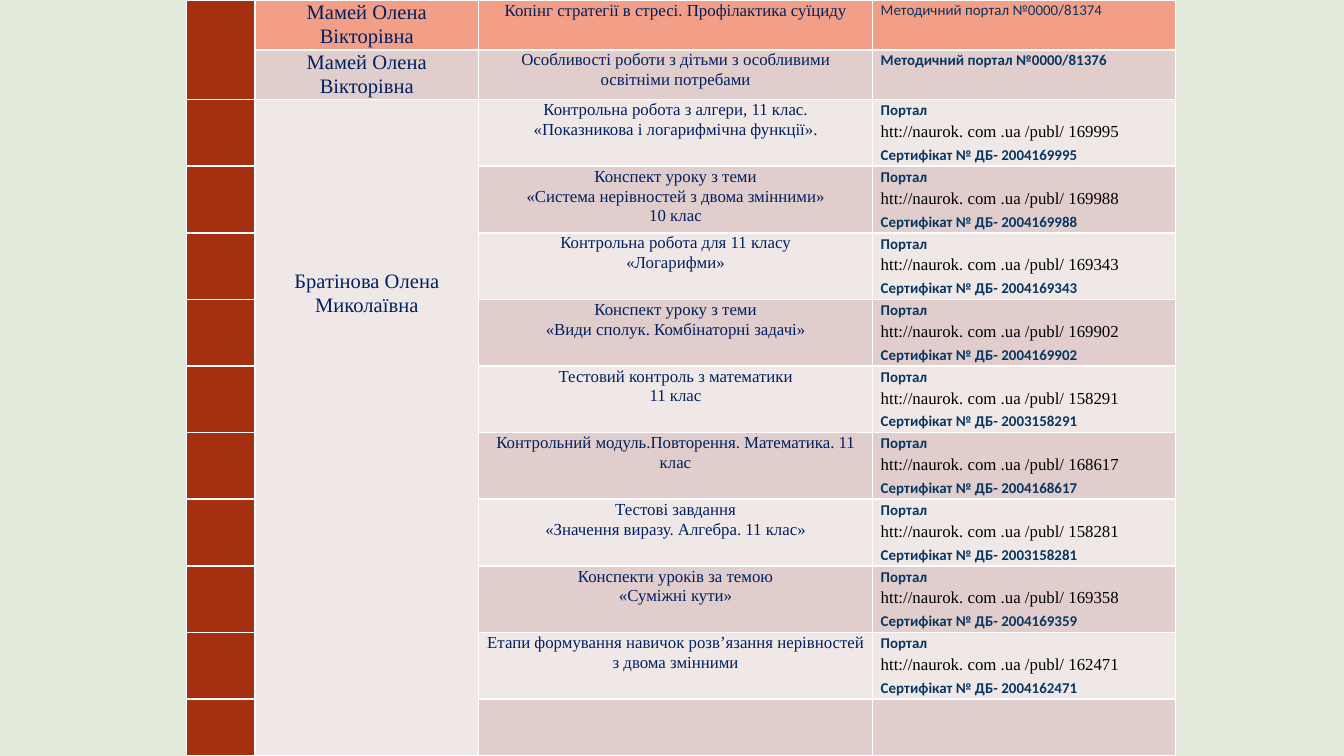
"""Builds a slide with a table of teachers' published works."""
import pptx
import pptx.dml.color
import pptx.enum.text
import pptx.oxml
import pptx.oxml.ns
import pptx.util

Pt = pptx.util.Pt
Rgb = pptx.dml.color.RGBColor.from_string
mid = pptx.enum.text.PP_ALIGN.CENTER
left = pptx.enum.text.PP_ALIGN.LEFT
hues = {"page": "E3E9DB", "rust": "A53010", "coral": "F39E87", "rose": "E1CDCC",
        "pale": "F0E8E7", "line": "FFFFFF", "navy": "002060", "blue": "073662", "black": "000000"}
fonts = {"serif": "Times New Roman", "sans": "Calibri"}
name = ("serif", 11, "navy", False, 1.06, 0)
work = ("serif", 9, "navy", False, 1.06, 0)
link = ("serif", 9, "black", False, 1.15, 0)
note = ("sans", 8, "blue", False, 1.06, 2)
bold = ("sans", 8, "blue", True, 1.06, 2)


def write(cell, lines, looks, align):
    """Puts one paragraph per line in the cell, each with its own look."""
    frame = cell.text_frame
    frame.text = "\n".join(lines)
    for i, (para, look) in enumerate(zip(frame.paragraphs, looks)):
        font, size, hue, heavy, gap, space = look
        para.alignment = align
        para.line_spacing = gap
        if i:
            para.space_before = Pt(space)
        for run in para.runs:
            run.font.name = fonts[font]
            run.font.size = Pt(size)
            run.font.bold = heavy
            run.font.color.rgb = Rgb(hues[hue])


def paint(cell, hue):
    """Gives the cell its borders, fill and margins."""
    props = cell._tc.get_or_add_tcPr()
    for side in ("lnL", "lnR", "lnT", "lnB"):
        props.append(pptx.oxml.parse_xml(
            f'<a:{side} {pptx.oxml.ns.nsdecls("a")} w="{Pt(1)}"><a:solidFill>'
            f'<a:srgbClr val="{hues["line"]}"/></a:solidFill></a:{side}>'))
    cell.fill.solid()
    cell.fill.fore_color.rgb = Rgb(hues[hue])
    cell.margin_left = cell.margin_right = Pt(4.5)
    cell.margin_top = cell.margin_bottom = 0


deck = pptx.Presentation()
deck.slide_width, deck.slide_height = Pt(720), Pt(405)
slide = deck.slides.add_slide(deck.slide_layouts[6])
slide.background.fill.solid()
slide.background.fill.fore_color.rgb = Rgb(hues["page"])

wides = [36.7, 119.7, 211, 162.3]
highs = [26.7] * 2 + [35.7] * 9 + [30.2]
table = slide.shapes.add_table(len(highs), len(wides), Pt(100), 0,
                               Pt(sum(wides)), Pt(sum(highs))).table
table.first_row = table.horz_banding = False
for col, wide in zip(table.columns, wides):
    col.width = Pt(wide)
for row, high in zip(table.rows, highs):
    row.height = Pt(high)

for r in range(len(highs)):
    band = "coral" if r == 0 else "rose" if r % 2 else "pale"
    for c in range(len(wides)):
        paint(table.cell(r, c), band if c else "rust")
table.cell(0, 0).merge(table.cell(1, 0))
table.cell(2, 1).merge(table.cell(11, 1))

talks = [
    ("Копінг стратегії в стресі. Профілактика суїциду", "81374", note),
    ("Особливості роботи з дітьми з особливими освітніми потребами", "81376", bold),
]
for r, (title, code, look) in enumerate(talks):
    write(table.cell(r, 1), ["Мамей Олена", "Вікторівна"], [name] * 2, mid)
    write(table.cell(r, 2), [title], [work], mid)
    write(table.cell(r, 3), [f"Методичний портал №0000/{code}"], [look], left)

owner = table.cell(2, 1)
owner.margin_top = Pt(90.5)
write(owner, ["Братінова Олена", "Миколаївна"], [name] * 2, mid)

works = [
    (["Контрольна робота з алгери, 11 клас.", "«Показникова і логарифмічна функції»."],
     "169995", "2004169995"),
    (["Конспект уроку з теми", "«Система нерівностей з двома змінними»", "10 клас"],
     "169988", "2004169988"),
    (["Контрольна робота для 11 класу", "«Логарифми»"], "169343", "2004169343"),
    (["Конспект уроку з теми", "«Види сполук. Комбінаторні задачі»"], "169902", "2004169902"),
    (["Тестовий контроль з математики", "11 клас"], "158291", "2003158291"),
    (["Контрольний модуль.Повторення. Математика. 11 клас"], "168617", "2004168617"),
    (["Тестові завдання", "«Значення виразу. Алгебра. 11 клас»"], "158281", "2003158281"),
    (["Конспекти уроків за темою", "«Суміжні кути»"], "169358", "2004169359"),
    (["Етапи формування навичок розв’язання нерівностей з двома змінними"],
     "162471", "2004162471"),
]
for r, (lines, code, proof) in enumerate(works, 2):
    write(table.cell(r, 2), lines, [work] * len(lines), mid)
    write(table.cell(r, 3),
          ["Портал", f"htt://naurok. com .ua /publ/ {code}", f"Сертифікат № ДБ- {proof}"],
          [bold, link, bold], left)
    table.cell(r, 3).margin_top = Pt(0.5)

deck.save("out.pptx")
